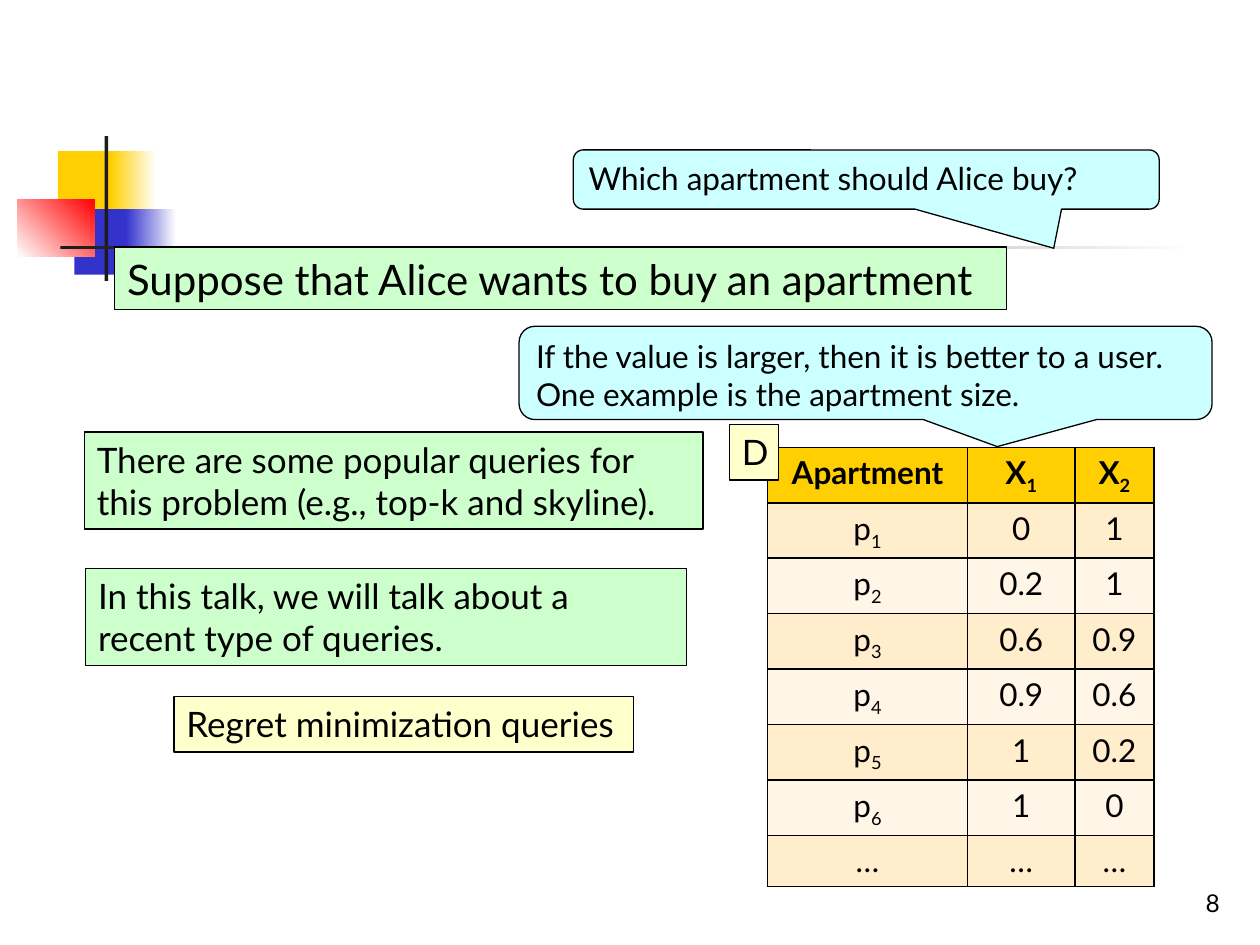
from lxml import etree
from pptx import Presentation
from pptx import util as u
from pptx.dml.color import RGBColor
from pptx.enum import shapes, text
from pptx.oxml import ns

FONT = "Lato"
GREEN, YELLOW, CYAN = "CCFFCC", "FFFFCC", "CCFFFF"


def color(value):
    """Turn a hex string into a colour."""
    return RGBColor.from_string(value)


def inches(box):
    """Convert left, top, width and height to lengths."""
    return [u.Inches(value) for value in box]


def add_run(paragraph, words, size, bold=False, subscript=False):
    """Append one styled run to a paragraph."""
    run = paragraph.add_run()
    run.text = words
    run.font.name = FONT
    run.font.size = u.Pt(size)
    run.font.bold = bold
    run.font.color.rgb = color("000000")
    if subscript:
        run._r.get_or_add_rPr().set("baseline", "-25000")


def add_panel(slide, box, fill, kind=shapes.MSO_SHAPE.RECTANGLE):
    """Add a flat filled shape without an outline."""
    shape = slide.shapes.add_shape(kind, *inches(box))
    shape.shadow.inherit = False
    shape.line.fill.background()
    shape.fill.solid()
    shape.fill.fore_color.rgb = color(fill)
    return shape


def add_gradient(slide, box, start, end, angle=0):
    """Add a panel that fades from one colour to another."""
    shape = add_panel(slide, box, start)
    shape.fill.gradient()
    shape.fill.gradient_angle = angle
    for stop, value in zip(shape.fill.gradient_stops, (start, end)):
        stop.color.rgb = color(value)


def add_decoration(slide, box):
    """Draw the coloured squares and crossing bars from the box's corner."""
    left, top, width, height = box
    add_panel(slide, (left + 0.32, top + 0.12, 0.48, 0.52), "FFCF01")
    add_gradient(slide, (left + 0.74, top + 0.12, 0.36, 0.52), "FFCF01", "FFFFFF")
    add_panel(slide, (left + 0.45, top + 0.58, 0.46, 0.52), "3333CC")
    add_gradient(slide, (left + 0.86, top + 0.58, 0.4, 0.52), "3333CC", "FFFFFF")
    add_gradient(slide, (left, top + 0.5, 0.61, 0.46), "FFFFFF", "FF0000", 45)
    add_panel(slide, (left + 0.69, top, 0.03, height), "1C1C1C")
    add_gradient(slide, (left + 0.34, top + 0.87, width - 0.34, 0.03), "1C1C1C", "FFFFFF")


def write_lines(shape, lines, size):
    """Write left-aligned lines from the top of an outlined shape."""
    shape.line.fill.solid()
    shape.line.fill.fore_color.rgb = color("000000")
    shape.line.width = u.Pt(0.75)
    frame = shape.text_frame
    frame.vertical_anchor = text.MSO_ANCHOR.TOP
    for index, line in enumerate(lines):
        paragraph = frame.add_paragraph() if index else frame.paragraphs[0]
        paragraph.alignment = text.PP_ALIGN.LEFT
        add_run(paragraph, line, size)


def add_label(slide, box, words, fill, size=20, wrap=False):
    """Add an outlined text panel that fits its text."""
    shape = add_panel(slide, box, fill)
    write_lines(shape, [words], size)
    shape.text_frame.word_wrap = wrap
    shape.text_frame.auto_size = text.MSO_AUTO_SIZE.SHAPE_TO_FIT_TEXT


def add_callout(slide, box, lines, pointer):
    """Add a speech bubble with its tip at the relative pointer."""
    shape = add_panel(slide, box, CYAN, shapes.MSO_SHAPE.ROUNDED_RECTANGULAR_CALLOUT)
    for index, value in enumerate((*pointer, 0.17)):
        shape.adjustments[index] = value
    write_lines(shape, lines, 18)
    shape.text_frame.word_wrap = True


def add_borders(cell):
    """Give a cell thin black borders on all sides."""
    properties = cell._tc.get_or_add_tcPr()
    for index, side in enumerate(("lnL", "lnR", "lnT", "lnB")):
        line = etree.Element(ns.qn("a:" + side), w=str(u.Pt(1)))
        fill = etree.SubElement(line, ns.qn("a:solidFill"))
        etree.SubElement(fill, ns.qn("a:srgbClr"), val="000000")
        properties.insert(index, line)


def add_apartments(slide, box):
    """Add the table of apartments and their two attributes."""
    scores = [("0", "1"), ("0.2", "1"), ("0.6", "0.9"), ("0.9", "0.6"), ("1", "0.2"), ("1", "0")]
    rows = [("Apartment", "X_1", "X_2")]
    rows += [(f"p_{number}", *pair) for number, pair in enumerate(scores, 1)]
    rows.append(("…",) * 3)
    table = slide.shapes.add_table(len(rows), 3, *inches(box)).table
    for column, width in zip(table.columns, (1.59, 0.85, 0.63)):
        column.width = u.Inches(width)
    for row, values in enumerate(rows):
        table.rows[row].height = u.Inches(box[3] / len(rows))
        fill = "FFCF01" if row == 0 else ("FFF6E7", "FFEDCC")[row % 2]
        for column, value in enumerate(values):
            cell = table.cell(row, column)
            cell.fill.solid()
            cell.fill.fore_color.rgb = color(fill)
            add_borders(cell)
            paragraph = cell.text_frame.paragraphs[0]
            paragraph.alignment = text.PP_ALIGN.CENTER
            base, _, index = value.partition("_")
            add_run(paragraph, base, 18, row == 0)
            if index:
                add_run(paragraph, index, 18, row == 0, True)


def add_page_number(slide, box, number):
    """Write the page number at the lower right of the box."""
    frame = slide.shapes.add_textbox(*inches(box)).text_frame
    frame.word_wrap = True
    frame.vertical_anchor = text.MSO_ANCHOR.BOTTOM
    frame.paragraphs[0].alignment = text.PP_ALIGN.RIGHT
    add_run(frame.paragraphs[0], number, 14)


def add_statements(slide):
    """Place the green statements and the yellow labels."""
    add_label(slide, (0.67, 3.43, 4.91, 0.77),
              "There are some popular queries for this problem (e.g., top-k and skyline).", GREEN, wrap=True)
    add_label(slide, (0.68, 4.51, 4.77, 0.77),
              "In this talk, we will talk about a recent type of queries.", GREEN, wrap=True)
    add_label(slide, (1.38, 5.53, 3.65, 0.44), "Regret minimization queries", YELLOW)
    add_label(slide, (5.79, 3.37, 0.39, 0.44), "D", YELLOW)


def main():
    """Build the slide and save it."""
    presentation = Presentation()
    presentation.slide_width, presentation.slide_height = u.Inches(10), u.Inches(7.5)
    slide = presentation.slides.add_slide(presentation.slide_layouts[6])
    add_decoration(slide, (0.14, 1.08, 9.34, 1.15))
    add_apartments(slide, (6.09, 3.55, 3.07, 3.24))
    add_page_number(slide, (7.7, 6.83, 2.08, 0.5), "8")
    add_label(slide, (0.91, 1.96, 7.08, 0.5), "Suppose that Alice wants to buy an apartment", GREEN, 24)
    add_callout(slide, (4.55, 1.19, 4.65, 0.47), ["Which apartment should Alice buy?"], (0.32, 1.16))
    add_callout(slide, (4.12, 2.59, 5.5, 0.74),
                ["If the value is larger, then it is better to a user.",
                 "One example is the apartment size."], (0.19, 0.79))
    add_statements(slide)
    presentation.save("out.pptx")


if __name__ == "__main__":
    main()
